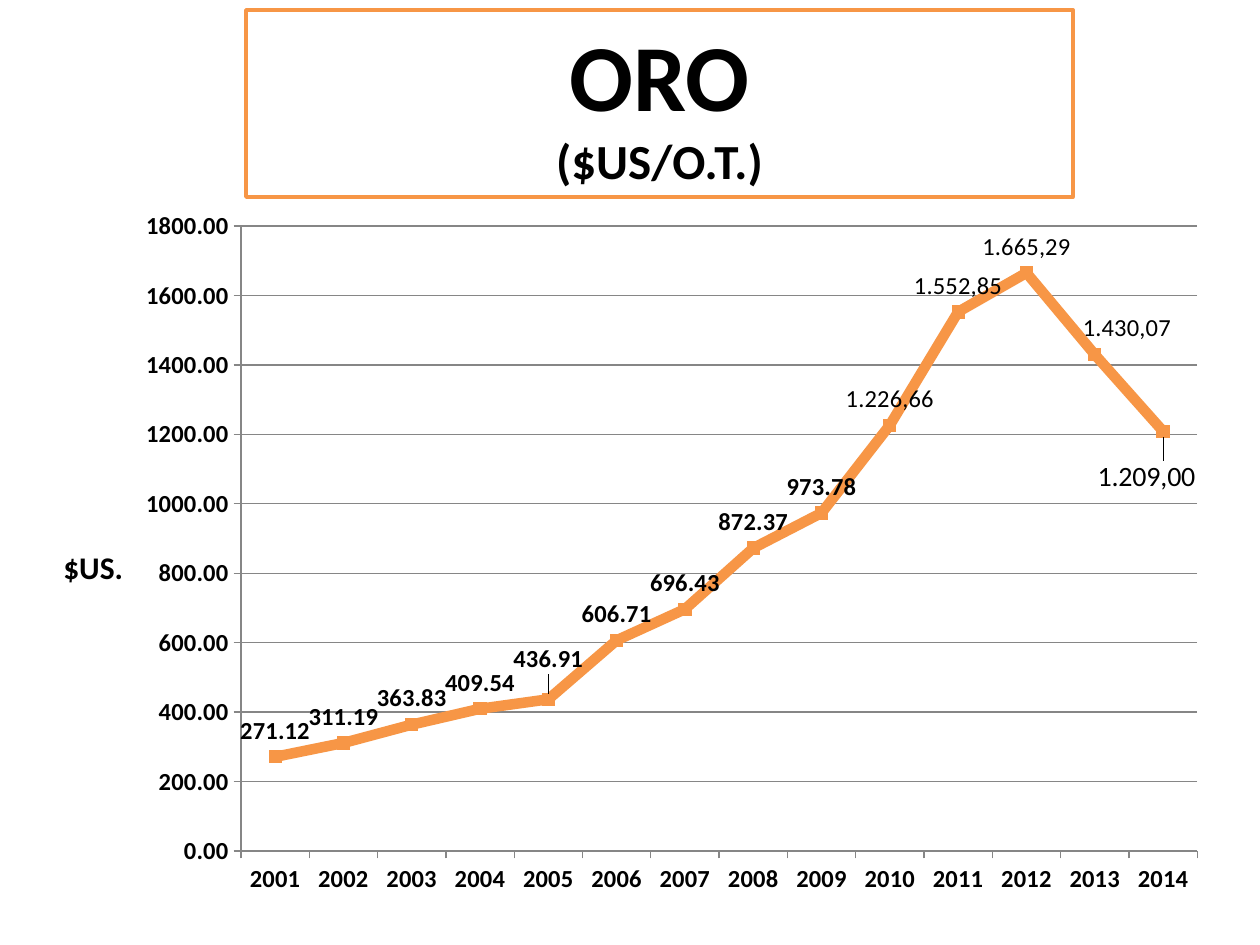
from pptx import Presentation
from pptx.chart.data import CategoryChartData
from pptx.dml.color import RGBColor
from pptx.enum.chart import XL_CHART_TYPE, XL_LABEL_POSITION, XL_MARKER_STYLE, XL_TICK_MARK
from pptx.enum.text import MSO_ANCHOR, PP_ALIGN
from pptx.oxml import parse_xml
from pptx.oxml.ns import nsdecls
from pptx.util import Pt

PX = 914400 // 126
COLORS = {"text": "000000", "gold": "F79646", "box": "FFFFFF", "axis": "868686"}
YEARS = [str(year) for year in range(2001, 2015)]
PRICES = [271.12, 311.19, 363.83, 409.54, 436.91, 606.71, 696.43,
          872.37, 973.78, 1226.66, 1552.85, 1665.29, 1430.07, 1209]
FRAME = (29, 197, 1191, 711)
PLOT = (241, 226, 956, 625)
AXIS_TITLE = (58, 540)
CUSTOM_LABELS = {9: "1.226,66", 10: "1.552,85", 11: "1.665,29", 12: "1.430,07", 13: "1.209,00"}
LABEL_SHIFTS = {4: (0, -14), 12: (32, 0), 13: (-17, 18)}


def rgb(name):
    return RGBColor.from_string(COLORS[name])


def manual_layout(target="", mode="", **fractions):
    tags = f'<c:layoutTarget val="{target}"/>' if target else ""
    if mode:
        tags += f'<c:xMode val="{mode}"/><c:yMode val="{mode}"/>'
    tags += "".join(f'<c:{k} val="{v:.3f}"/>' for k, v in fractions.items())
    return parse_xml(f'<c:layout {nsdecls("c")}><c:manualLayout>{tags}</c:manualLayout></c:layout>')


class SlideBuilder:
    """Hold the style and the current slide, and add each kind of element."""

    def __init__(self, prs):
        self.font_name = "Calibri"
        self.slide = prs.slides.add_slide(prs.slide_layouts[5])

    def format_font(self, font, size, bold=True):
        for name, value in {"name": self.font_name, "size": Pt(size), "bold": bold}.items():
            setattr(font, name, value)
        font.color.rgb = rgb("text")

    def format_line(self, line, color, width):
        line.color.rgb = rgb(color)
        line.width = Pt(width)

    def title(self, box, lines):
        sp = self.slide.shapes.title
        for name, value in zip(("left", "top", "width", "height"), box):
            setattr(sp, name, value * PX)
        sp.fill.solid()
        sp.fill.fore_color.rgb = rgb("box")
        self.format_line(sp.line, "gold", 2)
        tf = sp.text_frame
        tf.word_wrap = True
        tf.vertical_anchor = MSO_ANCHOR.MIDDLE
        for i, (text, size) in enumerate(lines):
            p = tf.add_paragraph() if i else tf.paragraphs[0]
            p.alignment = PP_ALIGN.CENTER
            p.space_before = Pt(0)
            r = p.add_run()
            r.text = text
            self.format_font(r.font, size)

    def line_chart(self, box, categories, values):
        data = CategoryChartData(number_format="0.00")
        data.categories = categories
        data.add_series("Series 1", values)
        chart = self.slide.shapes.add_chart(
            XL_CHART_TYPE.LINE_MARKERS, *(n * PX for n in box), data).chart
        chart.has_legend = chart.has_title = False
        self.format_font(chart.font, 10, False)
        for axis in (chart.category_axis, chart.value_axis):
            self.format_font(axis.tick_labels.font, 14)
            self.format_line(axis.format.line, "axis", 0.75)
            axis.major_tick_mark = XL_TICK_MARK.OUTSIDE
        series = chart.plots[0].series[0]
        series.smooth = False
        self.format_line(series.format.line, "gold", 6)
        marker = series.marker
        marker.style = XL_MARKER_STYLE.SQUARE
        marker.size = 7
        marker.format.fill.solid()
        marker.format.fill.fore_color.rgb = rgb("gold")
        marker.format.line.color.rgb = rgb("gold")
        return chart

    def value_axis(self, chart, text):
        axis = chart.value_axis
        for name, value in {"minimum_scale": 0, "maximum_scale": 1800, "major_unit": 200,
                            "has_major_gridlines": True}.items():
            setattr(axis, name, value)
        self.format_line(axis.major_gridlines.format.line, "axis", 0.75)
        axis.tick_labels.number_format = "0.00"
        axis.tick_labels.number_format_is_linked = False
        title = axis.axis_title
        r = title.text_frame.paragraphs[0].add_run()
        r.text = text
        self.format_font(r.font, 18)
        body = title._element.xpath(".//a:bodyPr")[0]
        body.set("rot", "0")
        body.set("vert", "horz")

    def point_labels(self, chart, texts, shifts):
        series = chart.plots[0].series[0]
        labels = series.data_labels
        for name, value in {"show_value": True, "position": XL_LABEL_POSITION.ABOVE,
                            "number_format": "0.00", "number_format_is_linked": False}.items():
            setattr(labels, name, value)
        self.format_font(labels.font, 14)
        last = max(texts)
        for i in sorted(texts.keys() | shifts.keys()):
            label = series.points[i].data_label
            if i in texts:
                r = label.text_frame.paragraphs[0].add_run()
                r.text = texts[i]
                self.format_font(r.font, 16 if i == last else 14, False)
            else:
                self.format_font(label.font, 14)
            label.position = XL_LABEL_POSITION.BELOW if i == last else XL_LABEL_POSITION.ABOVE
            if i in shifts:
                dx, dy = shifts[i]
                idx = series._element.xpath(f'.//c:dLbl/c:idx[@val="{i}"]')[0]
                idx.addnext(manual_layout(x=dx / FRAME[2], y=dy / FRAME[3]))

    def arrange(self, chart, frame, plot, axis_title):
        left, top, width, height = frame
        area = chart._chartSpace.xpath(".//c:plotArea")[0]
        title = chart.value_axis.axis_title._element
        for parent in (area, title):
            for old in parent.xpath("./c:layout"):
                parent.remove(old)
        area.insert(0, manual_layout(
            "inner", "edge", x=(plot[0] - left) / width, y=(plot[1] - top) / height,
            w=plot[2] / width, h=plot[3] / height))
        title.xpath("./c:tx")[0].addnext(manual_layout(
            mode="edge", x=(axis_title[0] - left) / width, y=(axis_title[1] - top) / height))


def main():
    prs = Presentation()
    prs.slide_width, prs.slide_height = 1260 * PX, 945 * PX
    s = SlideBuilder(prs)
    s.title((246, 10, 827, 187), [("ORO", 54), ("($US/O.T.)", 28)])
    chart = s.line_chart(FRAME, YEARS, PRICES)
    s.value_axis(chart, "$US.")
    s.point_labels(chart, CUSTOM_LABELS, LABEL_SHIFTS)
    s.arrange(chart, FRAME, PLOT, AXIS_TITLE)
    prs.save("out.pptx")


if __name__ == "__main__":
    main()
